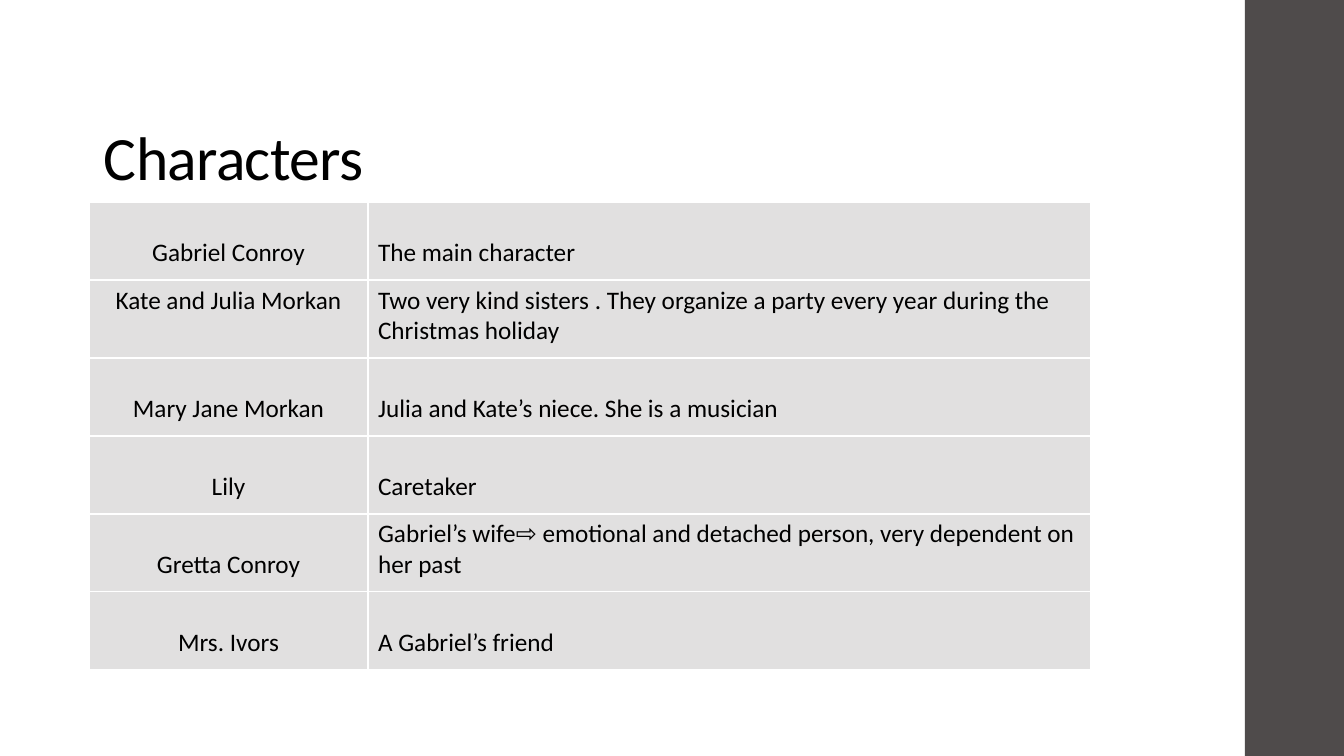
import pptx
import pptx.util
import pptx.dml.color
import pptx.enum.shapes
import pptx.enum.text
import pptx.oxml
import pptx.oxml.ns

PX = 9071.43  # EMU per px, at 100.8 px to the inch
BLACK = pptx.dml.color.RGBColor(0x00, 0x00, 0x00)
WHITE = pptx.dml.color.RGBColor(0xFF, 0xFF, 0xFF)
SIDEBAR_GREY = pptx.dml.color.RGBColor(0x4F, 0x4B, 0x4B)
CELL_GREY = pptx.dml.color.RGBColor(0xE1, 0xE0, 0xE0)

# name, description, line spacing of each
CHARACTERS = [
    ("Gabriel Conroy", "The main character", 2.0, 2.0),
    ("Kate and Julia Morkan",
     "Two very kind sisters . They organize a party every year during the Christmas holiday",
     1.0, 1.0),
    ("Mary Jane Morkan", "Julia and Kate’s niece. She is a musician", 2.0, 2.0),
    ("Lily", "Caretaker", 2.0, 2.0),
    ("Gretta Conroy",
     "Gabriel’s wife⇨ emotional and detached person, very dependent on her past",
     2.0, 1.0),
    ("Mrs. Ivors", "A Gabriel’s friend", 2.0, 2.0),
]
COLUMN_WIDTHS = (279, 723)
ROW_HEIGHT = 78


def px(*lengths):
    """Turn px lengths into a list of EMU lengths."""
    return [pptx.util.Emu(round(length * PX)) for length in lengths]


def write(text_frame, text, size, spacing, align):
    text_frame.text = text
    paragraph = text_frame.paragraphs[0]
    paragraph.line_spacing = spacing
    paragraph.alignment = align
    font = paragraph.runs[0].font
    font.name = "Calibri"
    font.size = pptx.util.Pt(size)
    font.color.rgb = BLACK


LEFT = pptx.enum.text.PP_ALIGN.LEFT
CENTER = pptx.enum.text.PP_ALIGN.CENTER

deck = pptx.Presentation()
deck.slide_width, deck.slide_height = px(1344, 756)
slide = deck.slides.add_slide(deck.slide_layouts[6])
slide.background.fill.solid()
slide.background.fill.fore_color.rgb = WHITE

sidebar = slide.shapes.add_shape(
    pptx.enum.shapes.MSO_SHAPE.RECTANGLE, *px(1245, 0, 99, 756))
sidebar.shadow.inherit = False
sidebar.fill.solid()
sidebar.fill.fore_color.rgb = SIDEBAR_GREY
sidebar.line.fill.background()

heading = slide.shapes.add_textbox(*px(94, 53, 1068, 146)).text_frame
heading.word_wrap = True
heading.vertical_anchor = pptx.enum.text.MSO_ANCHOR.BOTTOM
write(heading, "Characters", 44, 0.9, LEFT)
heading.paragraphs[0].runs[0].font._element.set("spc", "-50")

cast = slide.shapes.add_table(
    len(CHARACTERS), 2,
    *px(89, 202, sum(COLUMN_WIDTHS), ROW_HEIGHT * len(CHARACTERS))).table
cast.first_row = False
cast.horz_banding = False
for column, width in zip(cast.columns, px(*COLUMN_WIDTHS)):
    column.width = width

for row, (name, description, name_spacing, description_spacing) in enumerate(CHARACTERS):
    cast.rows[row].height = px(ROW_HEIGHT)[0]
    write(cast.cell(row, 0).text_frame, name, 18, name_spacing, CENTER)
    write(cast.cell(row, 1).text_frame, description, 18, description_spacing, LEFT)

for cell in cast.iter_cells():
    cell.fill.solid()
    cell.fill.fore_color.rgb = CELL_GREY
    cell_properties = cell._tc.get_or_add_tcPr()
    for position, side in enumerate(("lnL", "lnR", "lnT", "lnB")):
        border = pptx.oxml.parse_xml(
            f'<a:{side} {pptx.oxml.ns.nsdecls("a")} w="12700">'
            f'<a:solidFill><a:srgbClr val="{WHITE}"/></a:solidFill></a:{side}>')
        cell_properties.insert(position, border)

deck.save("out.pptx")
